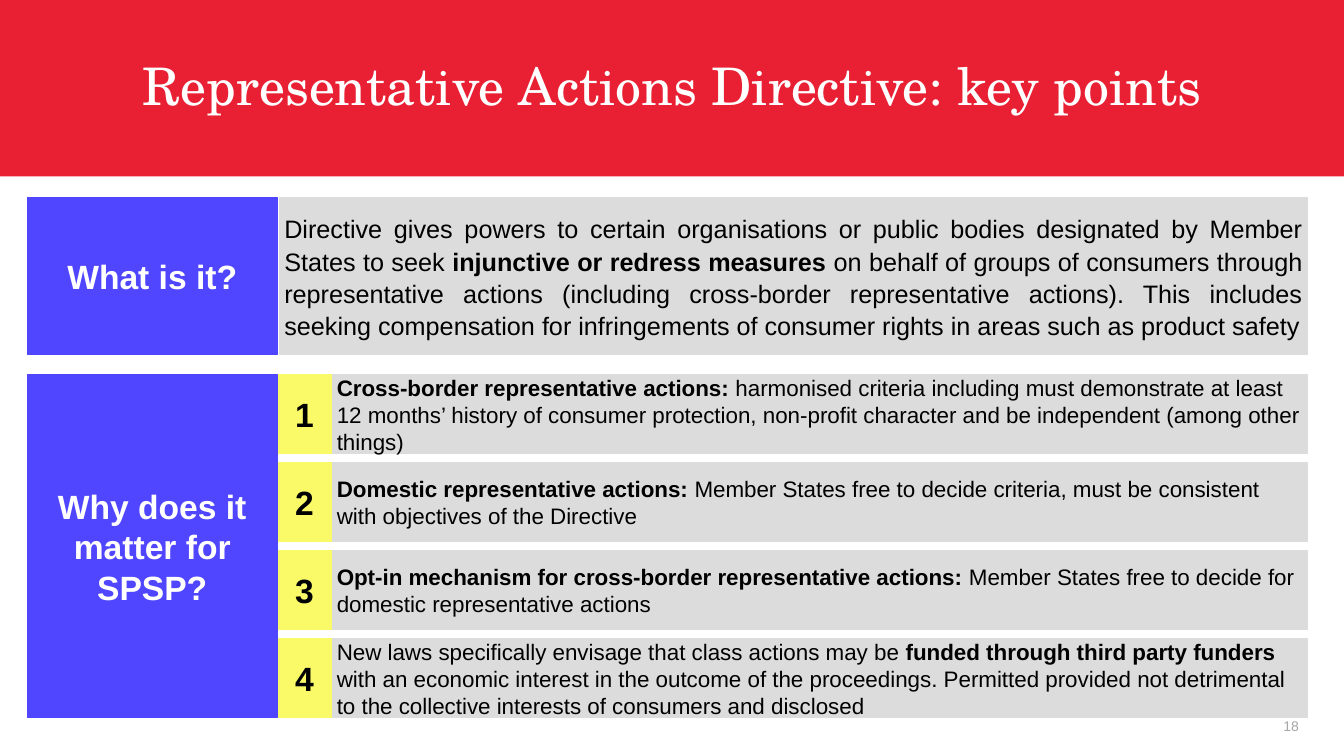
from pptx import Presentation
from pptx import util as u
from pptx.dml.color import RGBColor
from pptx.enum import shapes, text

RED = RGBColor(0xE9, 0x20, 0x33)
BLUE = RGBColor(0x50, 0x46, 0xFF)
YELLOW = RGBColor(0xFA, 0xFA, 0x69)
PALE = RGBColor(0xDC, 0xDC, 0xDC)
GREY = RGBColor(0xA6, 0xA6, 0xA6)
WHITE = RGBColor(0xFF, 0xFF, 0xFF)
BLACK = RGBColor(0, 0, 0)
LEFT, CENTER, RIGHT, JUSTIFY = (
    text.PP_ALIGN.LEFT, text.PP_ALIGN.CENTER, text.PP_ALIGN.RIGHT, text.PP_ALIGN.JUSTIFY)

# Columns and rows of the grid, in inches
WIDTH, HEIGHT = 13.33, 7.5
LABEL_X, LABEL_W = 0.27, 2.48
NUMBER_X, NUMBER_W = LABEL_X + LABEL_W, 0.54
POINT_X, POINT_W = NUMBER_X + NUMBER_W, 9.68
RIGHT_EDGE = POINT_X + POINT_W
SUMMARY_Y, SUMMARY_H = 1.96, 1.56
POINTS_Y, POINT_H, PITCH = 3.72, 0.78, 0.873


def write(box, spans, size, color, align, font="Arial"):
    """Fill a box with one paragraph made of (words, bold) spans."""
    frame = box.text_frame
    frame.word_wrap = True
    frame.vertical_anchor = text.MSO_ANCHOR.MIDDLE
    para = frame.paragraphs[0]
    para.alignment = align
    for words, bold in spans:
        span = para.add_run()
        span.text = words
        span.font.name = font
        span.font.size = u.Pt(size)
        span.font.bold = bold
        span.font.color.rgb = color
    return para


def add_panel(x, y, width, height, fill):
    panel = page.shapes.add_shape(
        shapes.MSO_SHAPE.RECTANGLE, u.Inches(x), u.Inches(y), u.Inches(width), u.Inches(height))
    panel.shadow.inherit = False
    panel.fill.solid()
    panel.fill.fore_color.rgb = fill
    panel.line.color.rgb = fill
    panel.line.width = u.Pt(1)
    frame = panel.text_frame
    frame.margin_left = frame.margin_right = u.Inches(0.05)
    frame.margin_top = frame.margin_bottom = u.Inches(0.05)
    return panel


deck = Presentation()
deck.slide_width, deck.slide_height = u.Inches(WIDTH), u.Inches(HEIGHT)
page = deck.slides.add_slide(deck.slide_layouts[6])

# Header band, title and page number
band = add_panel(0, 0, WIDTH, 1.75, RED)
band.line.fill.background()
title = page.shapes.add_textbox(u.Inches(0.65), u.Inches(0.25), u.Inches(12.03), u.Inches(1.25))
para = write(title, [("Representative Actions Directive: key points", False)],
             37, WHITE, CENTER, "TeX Gyre Schola")
para.line_spacing = 0.95
page_number = page.shapes.add_textbox(u.Inches(9.98), u.Inches(7), u.Inches(3), u.Inches(0.4))
write(page_number, [("18", False)], 10, GREY, RIGHT)

# Numbered points
points = [
    [("Cross-border representative actions:", True),
     (" harmonised criteria including must demonstrate at least 12 months’ history of consumer "
      "protection, non-profit character and be independent (among other things)", False)],
    [("Domestic representative actions: ", True),
     ("Member States free to decide criteria, must be consistent with objectives of the "
      "Directive", False)],
    [("Opt-in mechanism for cross-border representative actions:", True),
     (" Member States free to decide for domestic representative actions", False)],
    [("New laws specifically envisage that class actions may be ", False),
     ("funded through third party funders ", True),
     ("with an economic interest in the outcome of the proceedings. Permitted provided not "
      "detrimental to the collective interests of consumers and disclosed", False)],
]
for index, spans in enumerate(points):
    y = POINTS_Y + index * PITCH
    write(add_panel(POINT_X, y, POINT_W, POINT_H, PALE), spans, 16, BLACK, LEFT)
    write(add_panel(NUMBER_X, y, NUMBER_W, POINT_H, YELLOW),
          [(str(index + 1), True)], 24, BLACK, CENTER)

# Row labels
labels = [
    ("What is it?", SUMMARY_Y, SUMMARY_H),
    ("Why does it matter for SPSP?", POINTS_Y, 3 * PITCH + POINT_H),
]
for words, y, height in labels:
    write(add_panel(LABEL_X, y, LABEL_W, height, BLUE), [(words, True)], 24, WHITE, CENTER)

# Summary of the directive
summary_x = NUMBER_X + 0.02
summary = add_panel(summary_x, SUMMARY_Y, RIGHT_EDGE - summary_x, SUMMARY_H, PALE)
para = write(summary, [
    ("Directive gives powers to certain organisations or public bodies designated by Member "
     "States to seek ", False),
    ("injunctive or redress measures ", True),
    ("on behalf of groups of consumers through representative actions (including cross-border "
     "representative actions). This includes seeking compensation for infringements of consumer "
     "rights in areas such as product safety", False),
], 18, BLACK, JUSTIFY)
para.line_spacing = 1.07
para.space_after = u.Pt(8)

deck.save("out.pptx")
